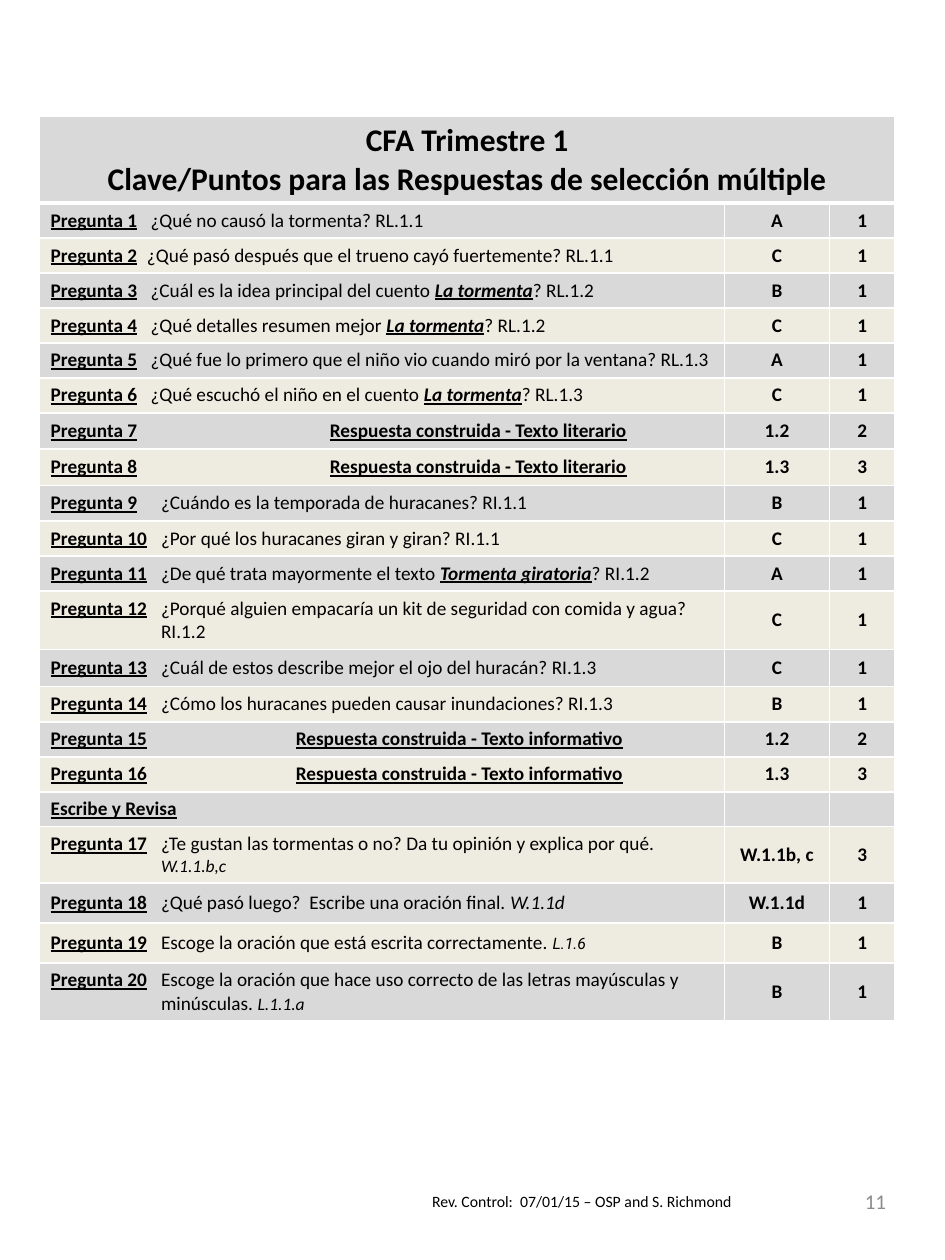
from pptx import Presentation
from pptx.dml.color import RGBColor
from pptx.enum.text import MSO_ANCHOR, PP_ALIGN
from pptx.oxml import parse_xml
from pptx.oxml.ns import nsdecls
from pptx.util import Pt

LEFT, CENTER, RIGHT = PP_ALIGN.LEFT, PP_ALIGN.CENTER, PP_ALIGN.RIGHT
TOP, MIDDLE = MSO_ANCHOR.TOP, MSO_ANCHOR.MIDDLE
BLANK_LAYOUT = 6
GREY, CREAM, WHITE, BLACK = "D9D9D9", "EEECE1", "FFFFFF", "000000"
INSET_X, INSET_Y = 6.5, 3.2
COLUMNS = [391.5, 60, 37.5]
TITLE_HEIGHT = 49.7
TITLE_LINES = ["CFA Trimestre 1", "Clave/Puntos para las Respuestas de selección múltiple"]


def work(text):
    return text, {"bold": True, "italic": True, "underline": True}


def code(text, size=10, font="Calibri"):
    return text, {"size": size, "italic": True, "font": font}


def constructed(kind):
    return [(f"Respuesta construida - Texto {kind}", {"bold": True, "underline": True})]


LITERARY, INFORMATIVE = constructed("literario"), constructed("informativo")
STORM = work("La tormenta")
NEAR, FAR = 57, 63
# (label, indent of question, question parts, answer, points, row height)
ROWS = [
    ("Pregunta 1", NEAR, ["¿Qué no causó la tormenta? RL.1.1"], "A", "1", 20),
    ("Pregunta 2", 55, ["¿Qué pasó después que el trueno cayó fuertemente? RL.1.1"], "C", "1", 20),
    ("Pregunta 3", NEAR, ["¿Cuál es la idea principal del cuento ", STORM, "? RL.1.2"], "B", "1", 20),
    ("Pregunta 4", NEAR, ["¿Qué detalles resumen mejor ", STORM, "? RL.1.2"], "C", "1", 20),
    ("Pregunta 5", NEAR, ["¿Qué fue lo primero que el niño vio cuando miró por la ventana? RL.1.3"], "A", "1", 20),
    ("Pregunta 6", NEAR, ["¿Qué escuchó el niño en el cuento ", STORM, "? RL.1.3"], "C", "1", 20),
    ("Pregunta 7", 159.5, LITERARY, "1.2", "2", 20.8),
    ("Pregunta 8", 159.5, LITERARY, "1.3", "3", 20.8),
    ("Pregunta 9", FAR, ["¿Cuándo es la temporada de huracanes? RI.1.1"], "B", "1", 20.3),
    ("Pregunta 10", FAR, ["¿Por qué los huracanes giran y giran? RI.1.1"], "C", "1", 20),
    ("Pregunta 11", FAR, ["¿De qué trata mayormente el texto ", work("Tormenta giratoria"), "? RI.1.2"], "A", "1", 20),
    ("Pregunta 12", FAR, ["¿Porqué alguien empacaría un kit de seguridad con comida y agua? RI.1.2"], "C", "1", 33.3),
    ("Pregunta 13", FAR, ["¿Cuál de estos describe mejor el ojo del huracán? RI.1.3"], "C", "1", 21.3),
    ("Pregunta 14", FAR, ["¿Cómo los huracanes pueden causar inundaciones? RI.1.3"], "B", "1", 20.2),
    ("Pregunta 15", 140, INFORMATIVE, "1.2", "2", 20),
    ("Pregunta 16", 140, INFORMATIVE, "1.3", "3", 20),
    ("Escribe y Revisa", 0, [], "", "", 20),
    ("Pregunta 17", FAR, ["¿Te gustan las tormentas o no? Da tu opinión y explica por qué. ", code("W.1.1.b,c")], "W.1.1b, c", "3", 32.2),
    ("Pregunta 18", FAR, ["¿Qué pasó luego?  Escribe una oración final. ", code("W.1.1d", 11)], "W.1.1d", "1", 22.8),
    ("Pregunta 19", FAR, ["Escoge la oración que está escrita correctamente. ", code("L.1.6", 9, "Roboto")], "B", "1", 22.8),
    ("Pregunta 20", FAR, ["Escoge la oración que hace uso correcto de las letras mayúsculas y minúsculas. ", code("L.1.1.a")], "B", "1", 33.2),
]


def rgb(value):
    return RGBColor.from_string(value)


def add_run(p, text, size=11, font="Calibri", color=BLACK, bold=False, italic=False, underline=False):
    r = p.add_run()
    r.text = text
    r.font.size, r.font.name = Pt(size), font
    r.font.bold, r.font.italic, r.font.underline = bold, italic, underline
    r.font.color.rgb = rgb(color)


def add_label(s, box, text, align=LEFT, anchor=TOP, **fmt):
    tf = s.shapes.add_textbox(*map(Pt, box)).text_frame
    tf.word_wrap = True
    tf.vertical_anchor = anchor
    p = tf.paragraphs[0]
    p.alignment = align
    add_run(p, text, **fmt)


def format_cell(cell, fill, top=1, bottom=1):
    cell.fill.solid()
    cell.fill.fore_color.rgb = rgb(fill)
    cell.vertical_anchor = MIDDLE
    cell.margin_left = cell.margin_right = Pt(INSET_X)
    cell.margin_top = cell.margin_bottom = Pt(INSET_Y)
    tc_pr = cell._tc.get_or_add_tcPr()
    for i, (side, width) in enumerate(zip("LRTB", (1, 1, top, bottom))):
        tc_pr.insert(i, parse_xml(
            f'<a:ln{side} {nsdecls("a")} w="{Pt(width)}"><a:solidFill>'
            f'<a:srgbClr val="{WHITE}"/></a:solidFill></a:ln{side}>'))


def fill_question(cell, label, indent, parts):
    p = cell.text_frame.paragraphs[0]
    add_run(p, label, bold=True, underline=True)
    if not parts:
        return
    p_pr = p._p.get_or_add_pPr()
    p_pr.set("marL", str(Pt(indent)))
    p_pr.set("indent", str(-Pt(indent)))
    add_run(p, "\t")
    for part in parts:
        text, fmt = (part, {}) if isinstance(part, str) else part
        add_run(p, text, **fmt)


def fill_value(cell, text):
    p = cell.text_frame.paragraphs[0]
    p.alignment = CENTER
    if text:
        add_run(p, text, bold=True)
    else:
        p._p.get_or_add_endParaRPr().set("sz", "1100")


def fill_title(table):
    cell = table.cell(0, 0)
    cell.merge(table.cell(0, len(COLUMNS) - 1))
    for c in table.rows[0].cells:
        format_cell(c, GREY, bottom=3)
    tf = cell.text_frame
    for i, line in enumerate(TITLE_LINES):
        p = tf.add_paragraph() if i else tf.paragraphs[0]
        p.alignment = CENTER
        add_run(p, line, size=18, bold=True)


def add_answer_key(s, left, top):
    heights = [TITLE_HEIGHT] + [row[-1] for row in ROWS]
    box = (left, top, sum(COLUMNS), sum(heights))
    table = s.shapes.add_table(len(heights), len(COLUMNS), *map(Pt, box)).table
    for column, width in zip(table.columns, COLUMNS):
        column.width = Pt(width)
    for row, height in zip(table.rows, heights):
        row.height = Pt(height)
    fill_title(table)
    for i, (label, indent, parts, answer, points, _) in enumerate(ROWS, 1):
        cells = list(table.rows[i].cells)
        for cell in cells:
            format_cell(cell, GREY if i % 2 else CREAM, top=3 if i == 1 else 1)
        fill_question(cells[0], label, indent, parts)
        fill_value(cells[1], answer)
        fill_value(cells[2], points)


def add_footer(s, left, top):
    add_label(s, (left, top + 10, 199.5, 18), "Rev. Control:  07/01/15 – OSP and S. Richmond", size=9)
    add_label(s, (left + 147.6, top, 126, 38), "11", align=RIGHT, anchor=MIDDLE, size=12, color="8C8C8C")


def main():
    prs = Presentation()
    prs.slide_width, prs.slide_height = Pt(540), Pt(720)
    s = prs.slides.add_slide(prs.slide_layouts[BLANK_LAYOUT])
    add_footer(s, 239.8, 667.5)
    add_answer_key(s, 22.5, 66.3)
    prs.save("out.pptx")


if __name__ == "__main__":
    main()
